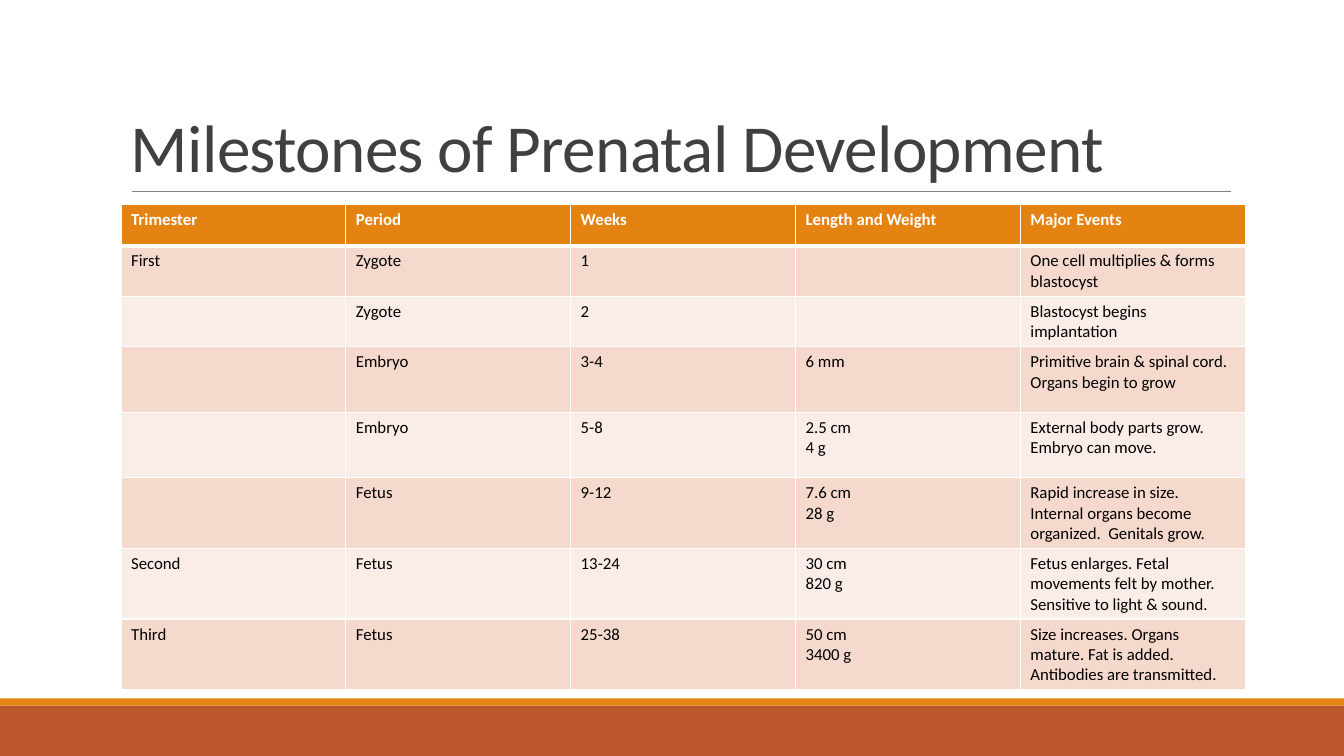
from dataclasses import dataclass

from lxml import etree
from pptx import Presentation
from pptx.dml.color import RGBColor
from pptx.enum.shapes import MSO_CONNECTOR, MSO_SHAPE
from pptx.enum.text import MSO_ANCHOR
from pptx.oxml.ns import qn
from pptx.slide import Slide
from pptx.table import _Cell
from pptx.text.text import _Paragraph
from pptx.util import Inches, Pt

RECTANGLE = MSO_SHAPE.RECTANGLE
STRAIGHT = MSO_CONNECTOR.STRAIGHT
BOTTOM = MSO_ANCHOR.BOTTOM
BLANK_LAYOUT = 6
SLIDE_WIDTH = 13.33
SLIDE_HEIGHT = 7.5


@dataclass(frozen=True)
class Theme:
    font: str = "Calibri"
    title_size: float = 48
    table_size: float = 12
    title: str = "404040"
    body: str = "000000"
    white: str = "FFFFFF"
    rule: str = "808080"
    orange: str = "E48312"
    rust: str = "BD582C"
    bands: tuple[str, str] = ("F5D9CC", "FAEDE7")


@dataclass(frozen=True)
class Band:
    top: float
    height: float
    color: str


@dataclass(frozen=True)
class Milestone:
    trimester: str
    period: str
    weeks: str
    size: str
    events: str
    height: float

    def texts(self) -> tuple[str, ...]:
        return self.trimester, self.period, self.weeks, self.size, self.events


THEME = Theme()
FOOTER_BANDS = (Band(7, 0.5, THEME.rust), Band(6.93, 0.07, THEME.orange))
HEADER = Milestone("Trimester", "Period", "Weeks", "Length and Weight", "Major Events", 0.41)
MILESTONES = (
    Milestone("First", "Zygote", "1", "", "One cell multiplies & forms blastocyst", 0.41),
    Milestone("", "Zygote", "2", "", "Blastocyst begins implantation", 0.41),
    Milestone("", "Embryo", "3-4", "6 mm",
              "Primitive brain & spinal cord. Organs begin to grow", 0.65),
    Milestone("", "Embryo", "5-8", "2.5 cm\n4 g",
              "External body parts grow.\nEmbryo can move.", 0.65),
    Milestone("", "Fetus", "9-12", "7.6 cm\n28 g",
              "Rapid increase in size. Internal organs become organized.  Genitals grow.", 0.65),
    Milestone("Second", "Fetus", "13-24", "30 cm\n820 g",
              "Fetus enlarges. Fetal movements felt by mother.  Sensitive to light & sound.", 0.63),
    Milestone("Third", "Fetus", "25-38", "50 cm\n3400 g",
              "Size increases. Organs mature. Fat is added. Antibodies are transmitted.", 0.6),
)


def rgb(color: str) -> RGBColor:
    return RGBColor.from_string(color)


def write(para: _Paragraph, text: str, *, size: float, color: str,
          bold: bool = False, spacing: float = 0) -> None:
    """Add one formatted span; spacing is the letter spacing in points."""
    span = para.add_run()
    span.text = text
    span.font.name = THEME.font
    span.font.size = Pt(size)
    span.font.bold = bold
    span.font.color.rgb = rgb(color)
    if spacing:
        span.font._element.set("spc", str(round(spacing * 100)))


def draw_band(page: Slide, band: Band) -> None:
    shape = page.shapes.add_shape(RECTANGLE, 0, Inches(band.top),
                                  Inches(SLIDE_WIDTH), Inches(band.height))
    shape.shadow.inherit = False
    shape.fill.solid()
    shape.fill.fore_color.rgb = rgb(band.color)
    shape.line.fill.background()


def draw_title(page: Slide, text: str) -> None:
    box = page.shapes.add_textbox(Inches(1.2), Inches(0.31), Inches(11), Inches(1.59))
    frame = box.text_frame
    frame.word_wrap = True
    frame.vertical_anchor = BOTTOM
    para = frame.paragraphs[0]
    para.line_spacing = 0.85
    write(para, text, size=THEME.title_size, color=THEME.title, spacing=-0.5)


def draw_title_rule(page: Slide) -> None:
    rule = page.shapes.add_connector(STRAIGHT, Inches(1.31), Inches(1.9),
                                     Inches(12.21), Inches(1.9))
    rule.line.color.rgb = rgb(THEME.rule)
    rule.line.width = Pt(0.5)
    etree.SubElement(rule._element.spPr, qn("a:effectLst"))


def add_borders(cell: _Cell, bottom: float, top: float) -> None:
    """Draw white borders, widths in points; call before the cell is filled."""
    properties = cell._tc.get_or_add_tcPr()
    for side, width in (("L", 1), ("R", 1), ("T", top), ("B", bottom)):
        line = etree.SubElement(properties, qn(f"a:ln{side}"), w=str(Pt(width)))
        fill = etree.SubElement(line, qn("a:solidFill"))
        etree.SubElement(fill, qn("a:srgbClr"), val=THEME.white)


def fill_cell(cell: _Cell, text: str, *, fill: str, color: str, bold: bool = False,
              top: float = 1, bottom: float = 1) -> None:
    add_borders(cell, bottom, top)
    cell.fill.solid()
    cell.fill.fore_color.rgb = rgb(fill)
    if not text:
        return
    frame = cell.text_frame
    for index, line in enumerate(text.split("\n")):
        para = frame.add_paragraph() if index else frame.paragraphs[0]
        write(para, line, size=THEME.table_size, color=color, bold=bold)


def draw_table(page: Slide) -> None:
    records = (HEADER, *MILESTONES)
    columns = len(HEADER.texts())
    height = sum(record.height for record in records)
    table = page.shapes.add_table(len(records), columns, Inches(1.2), Inches(2.03),
                                  Inches(11.15), Inches(height)).table
    for row, record in enumerate(records):
        table.rows[row].height = Inches(record.height)
        for column, text in enumerate(record.texts()):
            cell = table.cell(row, column)
            if row == 0:
                fill_cell(cell, text, fill=THEME.orange, color=THEME.white,
                          bold=True, bottom=3)
            else:
                fill_cell(cell, text, fill=THEME.bands[(row - 1) % 2],
                          color=THEME.body, top=3 if row == 1 else 1)


def main() -> None:
    deck = Presentation()
    deck.slide_width = Inches(SLIDE_WIDTH)
    deck.slide_height = Inches(SLIDE_HEIGHT)
    page = deck.slides.add_slide(deck.slide_layouts[BLANK_LAYOUT])
    for band in FOOTER_BANDS:
        draw_band(page, band)
    draw_title_rule(page)
    draw_title(page, "Milestones of Prenatal Development")
    draw_table(page)
    deck.save("out.pptx")


if __name__ == "__main__":
    main()
